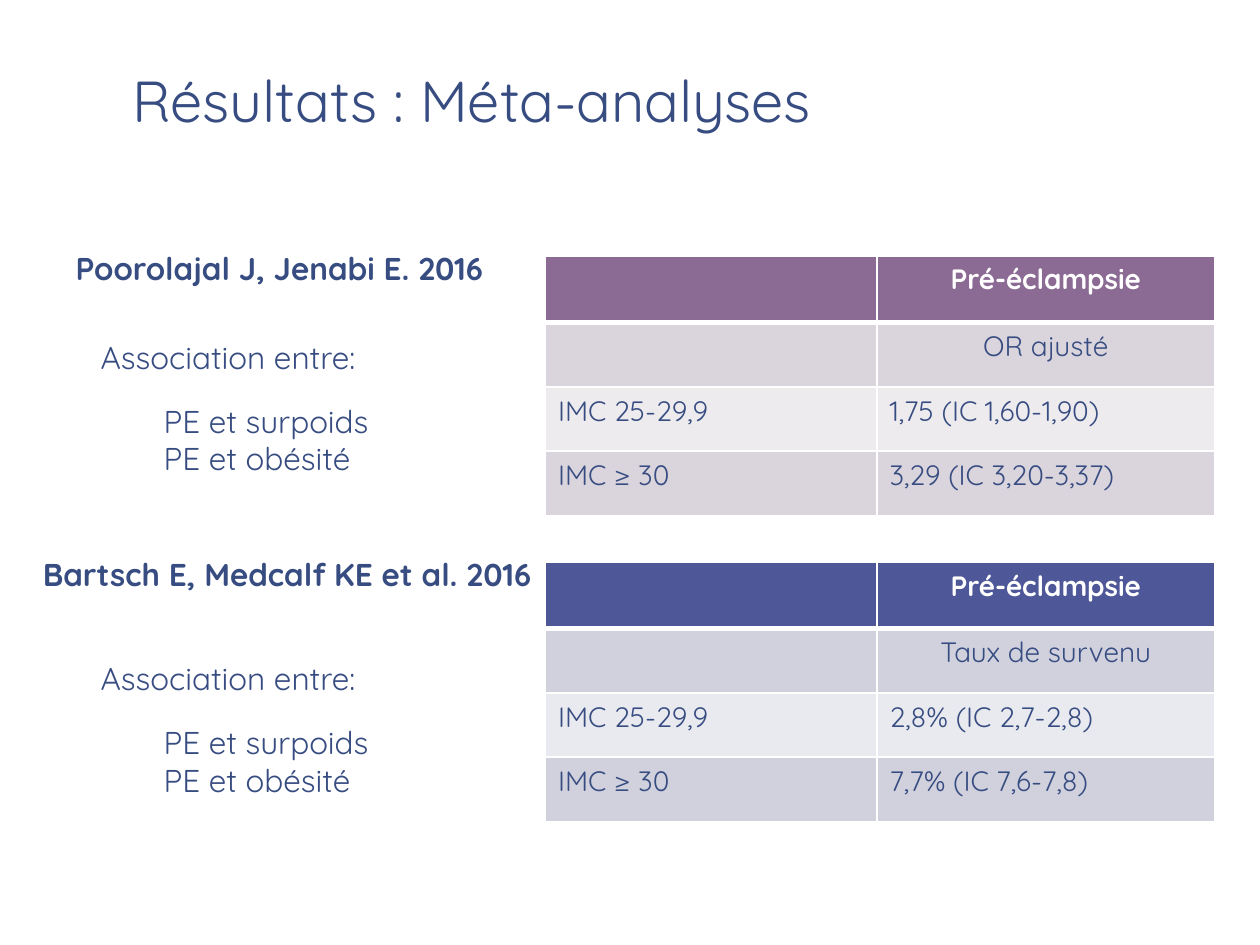
from pptx import Presentation
from pptx.dml.color import RGBColor
from pptx.enum.text import MSO_ANCHOR, PP_ALIGN
from pptx.oxml.ns import qn
from pptx.util import Inches, Pt
from lxml import etree

BOTTOM = MSO_ANCHOR.BOTTOM
CENTER = PP_ALIGN.CENTER

FONT = "Quicksand"
NAVY = RGBColor(0x37, 0x4C, 0x81)
WHITE = RGBColor(0xFF, 0xFF, 0xFF)
PURPLE = RGBColor(0x8B, 0x6A, 0x94)
PURPLE_MID = RGBColor(0xDA, 0xD4, 0xDC)
PURPLE_PALE = RGBColor(0xEE, 0xEB, 0xEE)
BLUE = RGBColor(0x4E, 0x57, 0x98)
BLUE_MID = RGBColor(0xD0, 0xD1, 0xDD)
BLUE_PALE = RGBColor(0xE9, 0xEA, 0xEF)

COLUMN_WIDTHS = (2.63, 2.68)
ROW_HEIGHTS = (0.53, 0.51, 0.51, 0.51)


def style_runs(para, size, color=NAVY, bold=False):
    for span in para.runs:
        span.font.name = FONT
        span.font.size = Pt(size)
        span.font.bold = bold
        span.font.color.rgb = color


def add_box(page, left, top, width, height):
    box = page.shapes.add_textbox(
        Inches(left), Inches(top), Inches(width), Inches(height)
    )
    box.text_frame.word_wrap = True
    return box.text_frame


def add_heading(page, text, place, size, spacing, bold):
    frame = add_box(page, *place)
    frame.vertical_anchor = BOTTOM
    frame.margin_left = frame.margin_right = Inches(0.13)
    frame.margin_top = frame.margin_bottom = Inches(0.07)
    frame.text = text
    para = frame.paragraphs[0]
    para.line_spacing = spacing
    style_runs(para, size, bold=bold)


def add_associations(page, top):
    frame = add_box(page, 0.7, top, 3.63, 1.25)
    frame.text = "Association entre:\nPE et surpoids\nPE et obésité"
    intro, *outcomes = frame.paragraphs
    style_runs(intro, 18)
    outcomes[0].space_before = Pt(15)
    for para in outcomes:
        properties = para._p.get_or_add_pPr()
        properties.set("marL", str(Inches(0.5)))
        properties.set("indent", "0")
        style_runs(para, 18)


def set_borders(cell, top, bottom):
    properties = cell._tc.get_or_add_tcPr()
    for side, points in (("L", 1), ("R", 1), ("T", top), ("B", bottom)):
        line = etree.SubElement(properties, qn(f"a:ln{side}"), w=str(Pt(points)))
        fill = etree.SubElement(line, qn("a:solidFill"))
        etree.SubElement(fill, qn("a:srgbClr"), val=str(WHITE))


def add_results(page, top, rows, colors):
    header, middle, pale = colors
    table = page.shapes.add_table(
        len(rows), len(COLUMN_WIDTHS), Inches(4.33), Inches(top),
        Inches(sum(COLUMN_WIDTHS)), Inches(sum(ROW_HEIGHTS)),
    ).table
    for column, width in zip(table.columns, COLUMN_WIDTHS):
        column.width = Inches(width)
    for row, height in zip(table.rows, ROW_HEIGHTS):
        row.height = Inches(height)
    for r, (texts, fill) in enumerate(zip(rows, (header, middle, pale, middle))):
        for c, text in enumerate(texts):
            cell = table.cell(r, c)
            set_borders(cell, 3 if r == 1 else 1, 3 if r == 0 else 1)
            cell.fill.solid()
            cell.fill.fore_color.rgb = fill
            if text:
                cell.text_frame.text = text
                para = cell.text_frame.paragraphs[0]
                if r < 2:
                    para.alignment = CENTER
                style_runs(para, 16, WHITE if r == 0 else NAVY, r == 0)


def result_rows(measure, overweight, obesity):
    return (
        ("", "Pré-éclampsie"),
        ("", measure),
        ("IMC 25-29,9", overweight),
        ("IMC ≥ 30", obesity),
    )


def main():
    deck = Presentation()
    deck.slide_width = Inches(10)
    deck.slide_height = Inches(7.5)
    page = deck.slides.add_slide(deck.slide_layouts[6])

    add_heading(page, "Résultats : Méta-analyses",
                (0.92, -0.39, 8.33, 1.53), 33, 0.85, False)
    add_heading(page, "Poorolajal J, Jenabi E. 2016",
                (0.47, 1.79, 4.08, 0.56), 18, 0.95, True)
    add_heading(page, "Bartsch E, Medcalf KE et al. 2016",
                (0.21, 4.22, 4.17, 0.56), 18, 0.95, True)

    add_results(page, 4.46,
                result_rows("Taux de survenu", "2,8% (IC 2,7-2,8)", "7,7% (IC 7,6-7,8)"),
                (BLUE, BLUE_MID, BLUE_PALE))
    add_results(page, 2.03,
                result_rows("OR ajusté", "1,75 (IC 1,60-1,90)", "3,29 (IC 3,20-3,37)"),
                (PURPLE, PURPLE_MID, PURPLE_PALE))
    for top in (2.63, 5.18):
        add_associations(page, top)

    deck.save("out.pptx")


if __name__ == "__main__":
    main()
